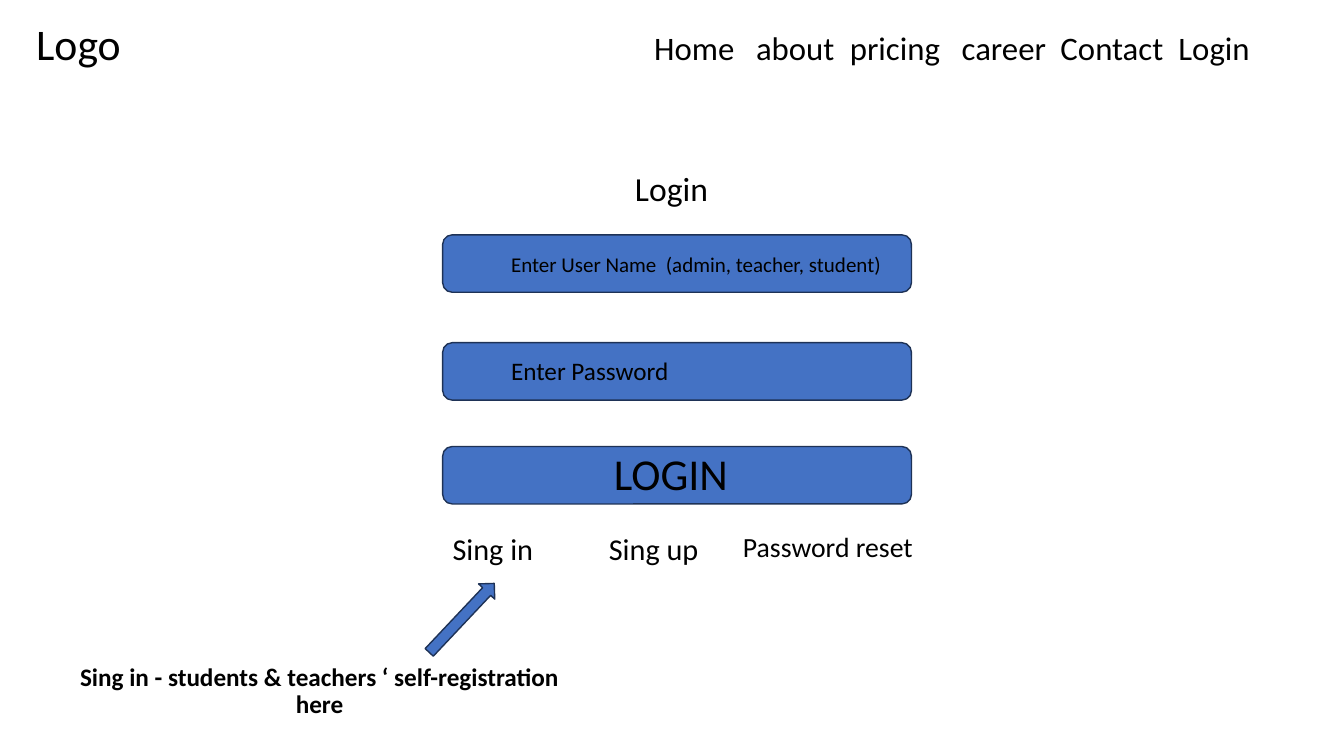
"""Build a login page wireframe slide."""
from dataclasses import dataclass

from lxml.etree import SubElement
from pptx import Presentation
from pptx.dml.color import RGBColor
from pptx.enum.shapes import MSO_SHAPE as Preset
from pptx.enum.text import MSO_ANCHOR as Anchor, PP_ALIGN as Align
from pptx.oxml.ns import qn
from pptx.slide import Slide
from pptx.text.text import _Paragraph as Paragraph
from pptx.util import Inches, Pt


@dataclass(frozen=True)
class Theme:
    """Colours, font and type sizes of the slide."""
    fill: RGBColor = RGBColor(0x44, 0x72, 0xC4)
    outline: RGBColor = RGBColor(0x1E, 0x32, 0x56)
    ink: RGBColor = RGBColor(0, 0, 0)
    font: str = "Calibri"
    logo: float = 31.2
    menu: float = 23.4
    title: float = 24
    user_hint: float = 15
    body: float = 18
    button: float = 31.5
    link: float = 21.6
    reset_link: float = 19.8


THEME = Theme()


@dataclass(frozen=True)
class Box:
    """Position and size in inches."""
    left: float
    top: float
    width: float
    height: float

    def lengths(self) -> list[Inches]:
        """Return the four lengths for python-pptx."""
        return [Inches(value) for value in (self.left, self.top, self.width, self.height)]


@dataclass(frozen=True)
class Label:
    """A text with its place and format."""
    text: str
    box: Box
    size: float
    spacing: float = 0.9
    align: Align = Align.LEFT
    anchor: Anchor = Anchor.BOTTOM
    bold: bool = False
    space_before: float = 0


@dataclass(frozen=True)
class Block:
    """A filled preset shape."""
    preset: Preset
    box: Box
    rotation: float = 0


FIELD_TOPS = (2.33, 3.4, 4.43)
BLOCKS = [Block(Preset.ROUNDED_RECTANGLE, Box(4.39, top, 4.65, 0.57)) for top in FIELD_TOPS]
BLOCKS.append(Block(Preset.RIGHT_ARROW, Box(4.11, 6.02, 0.94, 0.22), 313.3))

LABELS = [
    Label("Login", Box(2.49, 1.66, 8.34, 0.76), THEME.title,
          align=Align.CENTER, anchor=Anchor.TOP, space_before=10),
    Label("Enter User Name  (admin, teacher, student)", Box(4.97, 2.44, 3.88, 0.35),
          THEME.user_hint, 0.7),
    Label("Enter Password", Box(4.97, 3.52, 3.88, 0.35), THEME.body, 0.7),
    Label("LOGIN", Box(5.99, 4.45, 1.45, 0.54), THEME.button, 0.7),
    Label("Sing in", Box(4.39, 5.26, 1.45, 0.41), THEME.link, 0.8),
    Label("Sing up", Box(5.94, 5.26, 1.45, 0.41), THEME.link, 0.8),
    Label("Password reset", Box(7.27, 5.22, 1.91, 0.41), THEME.reset_link, 0.8),
    Label("Sing in - students & teachers ‘ self-registration here",
          Box(0.68, 6.4, 4.98, 0.78), THEME.body, align=Align.CENTER, bold=True),
]

HEADER = Label("Logo", Box(0.26, 0.13, 12.82, 0.61), THEME.logo)
MENU_STOPS = {"Home": 6.13, "about": 7.14, "pricing": 8.07,
              "career": 9.18, "Contact": 10.16, "Login": 11.33}


def add_run(paragraph: Paragraph, text: str, size: float, bold: bool = False) -> None:
    """Add a formatted run to a paragraph."""
    run = paragraph.add_run()
    run.text = text
    for name, value in {"name": THEME.font, "size": Pt(size), "bold": bold}.items():
        setattr(run.font, name, value)
    run.font.color.rgb = THEME.ink


def add_label(slide: Slide, label: Label) -> Paragraph:
    """Add a text box and return its paragraph."""
    frame = slide.shapes.add_textbox(*label.box.lengths()).text_frame
    for name, value in {"word_wrap": True, "vertical_anchor": label.anchor}.items():
        setattr(frame, name, value)
    paragraph = frame.paragraphs[0]
    formats = {"alignment": label.align, "line_spacing": label.spacing,
               "space_before": Pt(label.space_before)}
    for name, value in formats.items():
        setattr(paragraph, name, value)
    add_run(paragraph, label.text, label.size, label.bold)
    return paragraph


def add_block(slide: Slide, block: Block) -> None:
    """Add a filled and outlined shape."""
    shape = slide.shapes.add_shape(block.preset, *block.box.lengths())
    shape.rotation = block.rotation
    shape.shadow.inherit = False
    shape.fill.solid()
    shape.fill.fore_color.rgb = THEME.fill
    shape.line.color.rgb = THEME.outline
    shape.line.width = Pt(1)


def add_header(slide: Slide) -> None:
    """Add the logo word and the menu on tab stops."""
    paragraph = add_label(slide, HEADER)
    tabs = SubElement(paragraph._p.get_or_add_pPr(), qn("a:tabLst"))
    for item, stop in MENU_STOPS.items():
        SubElement(tabs, qn("a:tab"), pos=str(Inches(stop)), algn="l")
        add_run(paragraph, f"\t{item}", THEME.menu)


def main() -> None:
    """Build and save the presentation."""
    presentation = Presentation()
    presentation.slide_width = Inches(13.33)
    presentation.slide_height = Inches(7.5)
    slide = presentation.slides.add_slide(presentation.slide_layouts[6])
    for block in BLOCKS:
        add_block(slide, block)
    for label in LABELS:
        add_label(slide, label)
    add_header(slide)
    presentation.save("out.pptx")


if __name__ == "__main__":
    main()
